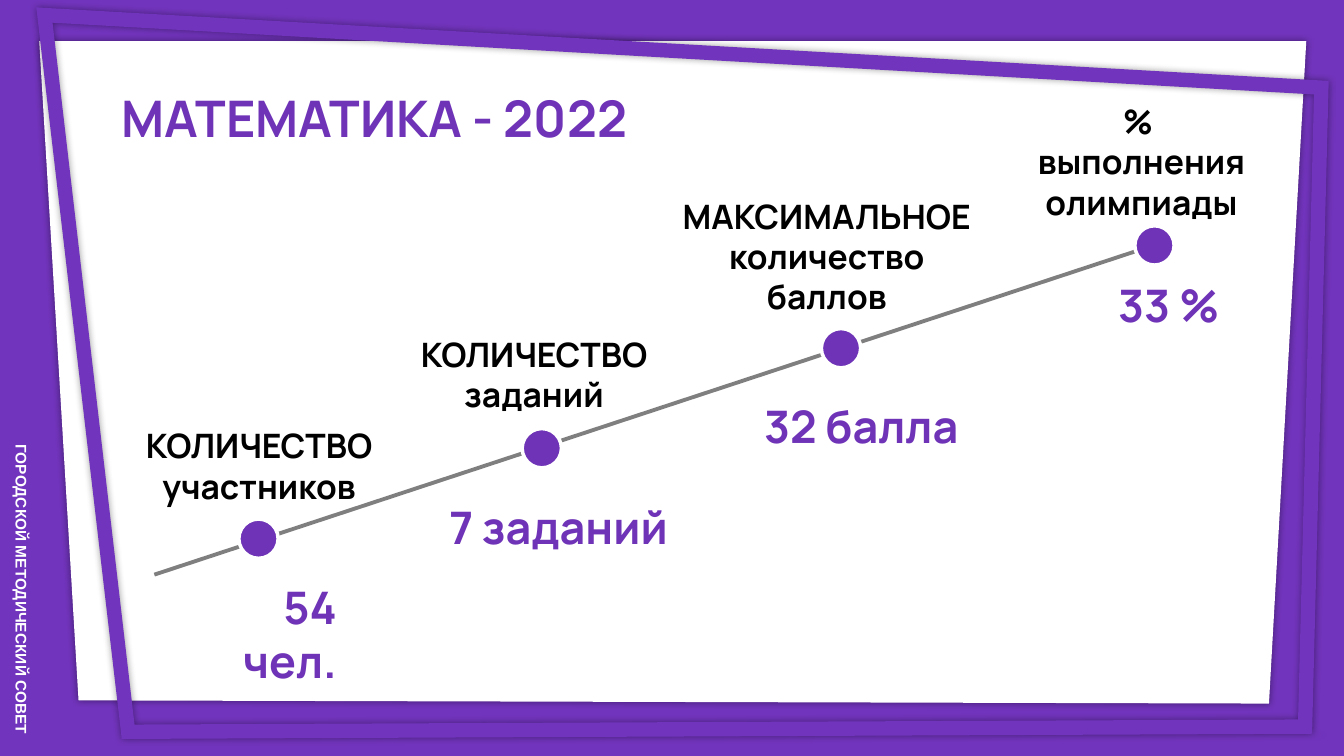
"""Builds the slide with the 2022 mathematics olympiad results."""
from dataclasses import dataclass

from lxml.etree import SubElement
from pptx import Presentation
from pptx.dml.color import RGBColor
from pptx.enum.shapes import MSO_CONNECTOR, MSO_SHAPE
from pptx.enum.text import MSO_ANCHOR, MSO_AUTO_SIZE, PP_ALIGN
from pptx.oxml.ns import qn
from pptx.util import Cm, Pt


@dataclass(frozen=True)
class Theme:
    """Colours, fonts and type sizes of the slide."""
    purple: str = "7134BC"
    accent: str = "6E33B7"
    grey: str = "7F7F7F"
    black: str = "000000"
    white: str = "FFFFFF"
    font: str = "Manrope"
    side_font: str = "Arial"
    title_size: int = 36
    value_size: int = 32
    label_size: int = 24
    side_size: int = 11


def apply(target, values):
    """Set every attribute named in a dict of format values."""
    for name, value in values.items():
        setattr(target, name, value)


class SlideBuilder:
    """Holds the theme and the current slide."""

    def __init__(self, slide, theme):
        """Paint the background in the frame colour."""
        self.slide, self.theme = slide, theme
        self.paint(slide.background.fill, theme.purple)

    def paint(self, fill, color):
        """Fill with one solid colour."""
        fill.solid()
        fill.fore_color.rgb = RGBColor.from_string(color)

    def stroke(self, line, color, width):
        """Give a line its colour and width."""
        self.paint(line.fill, color)
        line.width = Pt(width)

    def typeset(self, shape, text, box, size, color, align=PP_ALIGN.LEFT,
                font=None, margin=0.13):
        """Place a text shape and format its paragraphs."""
        apply(shape, dict(zip(("left", "top", "width", "height"), map(Cm, box))))
        frame = shape.text_frame
        frame.text = text
        apply(frame, {"word_wrap": True, "auto_size": MSO_AUTO_SIZE.NONE,
                      "vertical_anchor": MSO_ANCHOR.TOP,
                      "margin_left": Cm(0.25), "margin_right": Cm(0.25),
                      "margin_top": Cm(margin), "margin_bottom": Cm(margin)})
        for paragraph in frame.paragraphs:
            paragraph.alignment = align
            for run in paragraph.runs:
                apply(run.font, {"name": font or self.theme.font,
                                 "size": Pt(size), "bold": True})
                run.font.color.rgb = RGBColor.from_string(color)

    def title(self, text, box):
        """Fill the title placeholder and bring it in front of the panel."""
        heading = self.slide.shapes.title
        self.typeset(heading, text, box, self.theme.title_size, self.theme.accent)
        heading.element.getparent().append(heading.element)

    def text(self, text, box, size, color, **layout):
        """Add a text box."""
        note = self.slide.shapes.add_textbox(0, 0, 0, 0)
        self.typeset(note, text, box, size, color, **layout)
        return note

    def outline(self, corners):
        """Add a closed polygon with a soft shadow."""
        points = [(Cm(x), Cm(y)) for x, y in corners]
        builder = self.slide.shapes.build_freeform(*points[0])
        builder.add_line_segments(points[1:], close=True)
        polygon = builder.convert_to_shape()
        polygon.shadow.inherit = False
        effects = polygon.element.spPr.find(qn("a:effectLst"))
        shadow = SubElement(effects, qn("a:outerShdw"), blurRad=str(Pt(5)),
                            dist="0", dir="0", algn="ctr", rotWithShape="0")
        color = SubElement(shadow, qn("a:srgbClr"), val=self.theme.black)
        SubElement(color, qn("a:alpha"), val="40000")
        return polygon

    def panel(self, corners):
        """Add the white sheet."""
        sheet = self.outline(corners)
        self.paint(sheet.fill, self.theme.white)
        sheet.line.fill.background()

    def frame(self, corners):
        """Add the tilted frame with sharp corners."""
        border = self.outline(corners)
        border.fill.background()
        self.stroke(border.line, self.theme.purple, 10.25)
        SubElement(border.element.spPr.find(qn("a:ln")), qn("a:miter"), lim="800000")

    def line(self, start, end):
        """Add the rising line."""
        rise = self.slide.shapes.add_connector(
            MSO_CONNECTOR.STRAIGHT, *map(Cm, start + end))
        self.stroke(rise.line, self.theme.grey, 2.75)
        SubElement(rise.element.spPr, qn("a:effectLst"))

    def dot(self, left, top, size=0.99):
        """Add a round marker with a white rim."""
        marker = self.slide.shapes.add_shape(
            MSO_SHAPE.OVAL, *map(Cm, (left, top, size, size)))
        marker.shadow.inherit = False
        self.paint(marker.fill, self.theme.accent)
        self.stroke(marker.line, self.theme.white, 2.5)


SHEET = [(0.99, 1.04), (32.92, 1.04), (31.98, 17.73), (1.98, 17.65)]
BORDER = [(1.12, 0.38), (3.23, 18.44), (32.89, 18.31), (33.3, 2.21)]
STAGES = [
    ((6.02, 13.08), "КОЛИЧЕСТВО участников", (3.23, 10.59, 6.6, 2.31),
     "54 чел.", (4.32, 14.48, 4.42, 1.63), PP_ALIGN.RIGHT),
    ((13.16, 10.8), "КОЛИЧЕСТВО заданий", (10.16, 8.28, 6.6, 2.31),
     "7 заданий", (10.49, 12.47, 6.6, 1.63), PP_ALIGN.RIGHT),
    ((20.7, 8.28), "МАКСИМАЛЬНОЕ количество баллов", (16.76, 4.8, 8.15, 3.71),
     "32 балла", (17.81, 9.91, 6.6, 1.63), PP_ALIGN.RIGHT),
    ((28.6, 5.69), "% \nвыполнения\nолимпиады", (24.69, 2.41, 8.15, 3.71),
     "33 %", (27.46, 6.88, 3.99, 1.63), PP_ALIGN.CENTER),
]


def main():
    """Build and save the presentation."""
    theme = Theme()
    deck = Presentation()
    apply(deck, {"slide_width": Cm(33.87), "slide_height": Cm(19.05)})
    page = SlideBuilder(deck.slides.add_slide(deck.slide_layouts[5]), theme)
    council = page.text("ГОРОДСКОЙ МЕТОДИЧЕСКИЙ СОВЕТ", (-3.68, 14.33, 8.38, 1.04),
                        theme.side_size, theme.white, align=PP_ALIGN.CENTER,
                        font=theme.side_font, margin=0.25)
    council.rotation = 90
    page.panel(SHEET)
    page.frame(BORDER)
    page.title("МАТЕМАТИКА - 2022", (2.82, 2.06, 17.02, 1.8))
    page.line((3.89, 14.48), (29.11, 6.17))
    for spot, label, label_box, value, value_box, align in STAGES:
        page.dot(*spot)
        page.text(label, label_box, theme.label_size, theme.black,
                  align=PP_ALIGN.CENTER)
        page.text(value, value_box, theme.value_size, theme.accent, align=align)
    deck.save("out.pptx")


if __name__ == "__main__":
    main()
